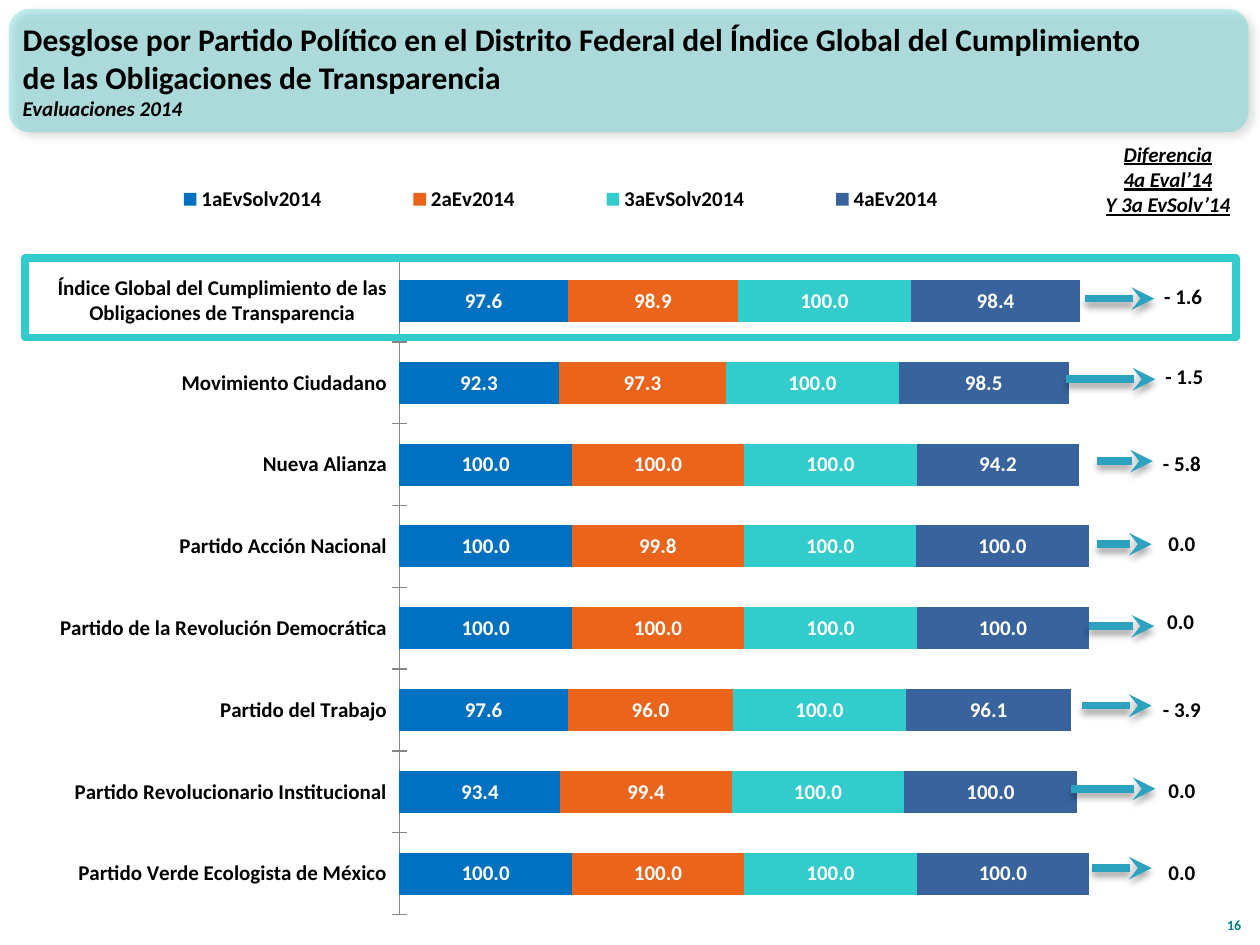
from dataclasses import dataclass

from lxml.etree import SubElement
from pptx import Presentation
from pptx.chart.data import CategoryChartData
from pptx.dml.color import RGBColor
from pptx.enum.chart import (XL_CHART_TYPE as ChartType, XL_LABEL_POSITION as LabelPos,
                             XL_LEGEND_POSITION as LegendPos, XL_TICK_MARK as Tick)
from pptx.enum.shapes import MSO_CONNECTOR as Connector, MSO_SHAPE as Shape
from pptx.enum.text import MSO_ANCHOR as Anchor, MSO_AUTO_SIZE as AutoSize, PP_ALIGN as Align
from pptx.oxml.ns import qn
from pptx.util import Inches, Pt

FONT = "Calibri"
BLACK, WHITE, TEAL, ARROW = "000000", "FFFFFF", "33CCCC", "2DA2BF"
COLUMNS, ROWS = 100, 75  # grid over the slide
SLIDE_W, SLIDE_H = Inches(10), Inches(7.5)


@dataclass
class Party:
    name: str
    scores: tuple
    difference: str
    arrow_start: float  # columns
    arrow_end: float
    arrow_row: float
    label_col: float
    label_row: float


@dataclass
class Evaluation:
    name: str
    color: str
    number_format: str = "0.0"


PARTIES = [
    Party("Índice Global del Cumplimiento de las\nObligaciones de Transparencia",
          (97.6, 98.9, 100, 98.4), "- 1.6", 86.1, 91.6, 23.7, 90.5, 22),
    Party("Movimiento Ciudadano", (92.3, 97.3, 100, 98.5),
          "- 1.5", 84.6, 91.7, 30.1, 90.6, 28.4),
    Party("Nueva Alianza", (100, 100, 100, 94.2),
          "- 5.8", 87.1, 91.5, 36.6, 90.4, 35.3),
    Party("Partido Acción Nacional", (100, 99.8, 100, 100),
          "0.0", 87.1, 91.4, 43.2, 90.4, 41.6),
    Party("Partido de la Revolución Democrática", (100, 100, 100, 100),
          "0.0", 86.4, 91.6, 49.7, 90.3, 47.8),
    Party("Partido del Trabajo", (97.6, 96, 100, 96.1),
          "- 3.9", 85.9, 91.4, 56, 90.4, 54.8),
    Party("Partido Revolucionario Institucional", (93.4, 99.4, 100, 100),
          "0.0", 85, 91.7, 62.6, 90.4, 61.2),
    Party("Partido Verde Ecologista de México", (100, 100, 100, 100),
          "0.0", 86.7, 91.4, 68.9, 90.4, 67.7),
]
EVALUATIONS = [
    Evaluation("1aEvSolv2014", "0070C0", "#,##0.0"),
    Evaluation("2aEv2014", "EB641B"),
    Evaluation("3aEvSolv2014", TEAL),
    Evaluation("4aEv2014", "39639D"),
]


def rgb(color: str) -> RGBColor:
    return RGBColor.from_string(color)


def cells(left: float, top: float, width: float, height: float) -> tuple:
    """Turn grid columns and rows into slide lengths."""
    across, down = SLIDE_W / COLUMNS, SLIDE_H / ROWS
    return (round(left * across), round(top * down),
            round(width * across), round(height * down))


def set_font(font, size: float, color: str, italic: bool = False, underline: bool = False):
    font.name, font.size, font.bold = FONT, Pt(size), True
    font.italic, font.underline = italic, underline
    font.color.rgb = rgb(color)


def write(frame, text: str, size: float = 12, color: str = BLACK, align=Align.CENTER,
          italic: bool = False, underline: bool = False, added: bool = False):
    """Write one paragraph per line of text, after the existing ones if added."""
    for index, line in enumerate(text.split("\n")):
        fresh = added or index > 0
        paragraph = frame.add_paragraph() if fresh else frame.paragraphs[0]
        paragraph.alignment = align
        run = paragraph.add_run()
        run.text = line
        set_font(run.font, size, color, italic, underline)


def add_label(slide, box: tuple, text: str, anchor=Anchor.TOP, **style):
    frame = slide.shapes.add_textbox(*cells(*box)).text_frame
    frame.word_wrap = True
    frame.vertical_anchor = anchor
    write(frame, text, **style)


def cast_shadow(shape, opacity: int, angle: int):
    properties = shape._element.spPr
    effects = properties.find(qn("a:effectLst"))
    if effects is None:
        effects = SubElement(properties, qn("a:effectLst"))
    outer = SubElement(effects, qn("a:outerShdw"), blurRad=str(Pt(4)), dist=str(Pt(3)),
                       dir=str(angle * 60000), algn="ctr", rotWithShape="0")
    tint = SubElement(outer, qn("a:srgbClr"), val=BLACK)
    SubElement(tint, qn("a:alpha"), val=str(opacity * 1000))


def add_header(slide):
    panel = slide.shapes.add_shape(Shape.ROUNDED_RECTANGLE, *cells(0.7, 0.7, 98.4, 9.8))
    panel.shadow.inherit = False
    panel.fill.solid()
    panel.fill.fore_color.rgb = rgb(TEAL)
    SubElement(panel._element.spPr.find(f".//{qn('a:srgbClr')}"), qn("a:alpha"), val="30000")
    panel.line.fill.background()
    cast_shadow(panel, 40, 45)

    title = slide.shapes.title
    title._element.addprevious(panel._element)  # panel lies behind the title
    title.left, title.top, title.width, title.height = cells(0.8, 0.9, 92.5, 9.4)
    frame = title.text_frame
    frame.word_wrap, frame.auto_size = True, AutoSize.NONE
    frame.vertical_anchor = Anchor.MIDDLE
    write(frame, "Desglose por Partido Político en el Distrito Federal del Índice Global "
          "del Cumplimiento de las Obligaciones de Transparencia", size=18, align=Align.LEFT)
    write(frame, "Evaluaciones 2014", align=Align.LEFT, italic=True, added=True)


def set_layout(parent, inner: bool = False, **shares: float):
    """Fix the place of a chart part as shares of the chart's size."""
    layout = parent.find(qn("c:layout"))
    if layout is None:
        layout = parent.makeelement(qn("c:layout"))
        parent.insert(1 if parent.tag == qn("c:legend") else 0, layout)
    manual = SubElement(layout, qn("c:manualLayout"))
    if inner:
        SubElement(manual, qn("c:layoutTarget"), val="inner")
    for mode in ("xMode", "yMode"):
        SubElement(manual, qn(f"c:{mode}"), val="edge")
    for side, share in shares.items():
        SubElement(manual, qn(f"c:{side}"), val=str(share))


def add_scores(slide):
    data = CategoryChartData(number_format="#,##0.0")
    data.categories = [party.name for party in PARTIES]
    for index, evaluation in enumerate(EVALUATIONS):
        data.add_series(evaluation.name, [party.scores[index] for party in PARTIES])
    chart = slide.shapes.add_chart(ChartType.BAR_STACKED, *cells(0.8, 13.4, 88.3, 60.4),
                                   data).chart
    set_font(chart.font, 12, BLACK)
    chart.has_title = False

    # Bars and their values
    plot = chart.plots[0]
    plot.gap_width, plot.overlap, plot.vary_by_categories = 95, 100, False
    for series, evaluation in zip(plot.series, EVALUATIONS):
        series.format.fill.solid()
        series.format.fill.fore_color.rgb = rgb(evaluation.color)
        labels = series.data_labels
        labels.show_value, labels.position = True, LabelPos.CENTER
        labels.number_format = evaluation.number_format
        labels.number_format_is_linked = False
        set_font(labels.font, 12, WHITE)

    # Axes
    names, values = chart.category_axis, chart.value_axis
    names.reverse_order = True
    names.major_tick_mark = Tick.CROSS
    names.format.line.color.rgb = rgb("868686")
    values.minimum_scale, values.maximum_scale, values.major_unit = 0, 400, 100
    values.has_major_gridlines = values.visible = False

    # Legend and plot area
    chart.has_legend = True
    chart.legend.position = LegendPos.TOP
    chart.legend.include_in_layout = False
    set_layout(chart.legend._element, x=0.08, y=0.01, w=0.83, h=0.06)
    set_layout(chart._chartSpace.chart.plotArea, inner=True, x=0.35, y=0.12, w=0.62, h=0.86)


def add_difference(slide, party: Party):
    start = cells(party.arrow_start, party.arrow_row, 0, 0)[:2]
    end = cells(party.arrow_end, party.arrow_row, 0, 0)[:2]
    arrow = slide.shapes.add_connector(Connector.STRAIGHT, *start, *end)
    arrow.line.color.rgb = rgb(ARROW)
    arrow.line.width = Pt(4.33)
    SubElement(arrow._element.spPr.find(qn("a:ln")), qn("a:tailEnd"), type="stealth")
    cast_shadow(arrow, 35, 90)
    add_label(slide, (party.label_col, party.label_row, 6.8, 3), party.difference)


def add_global_frame(slide):
    frame = slide.shapes.add_shape(Shape.RECTANGLE, *cells(2, 20.5, 96.1, 6.3))
    frame.shadow.inherit = False
    frame.fill.background()
    frame.line.color.rgb = rgb(TEAL)
    frame.line.width = Pt(4.33)


def main():
    deck = Presentation()
    deck.slide_width, deck.slide_height = SLIDE_W, SLIDE_H
    slide = deck.slides.add_slide(deck.slide_layouts[5])
    add_header(slide)
    add_label(slide, (95.5, 70.6, 4, 4), "16", Anchor.BOTTOM, size=8, color="008080",
              align=Align.RIGHT)
    add_label(slide, (86.3, 10.7, 12.8, 7.1), "Diferencia\n4a Eval’14\nY 3a EvSolv’14",
              italic=True, underline=True)
    add_scores(slide)
    add_global_frame(slide)
    for party in PARTIES:
        add_difference(slide, party)
    deck.save("out.pptx")


if __name__ == "__main__":
    main()
